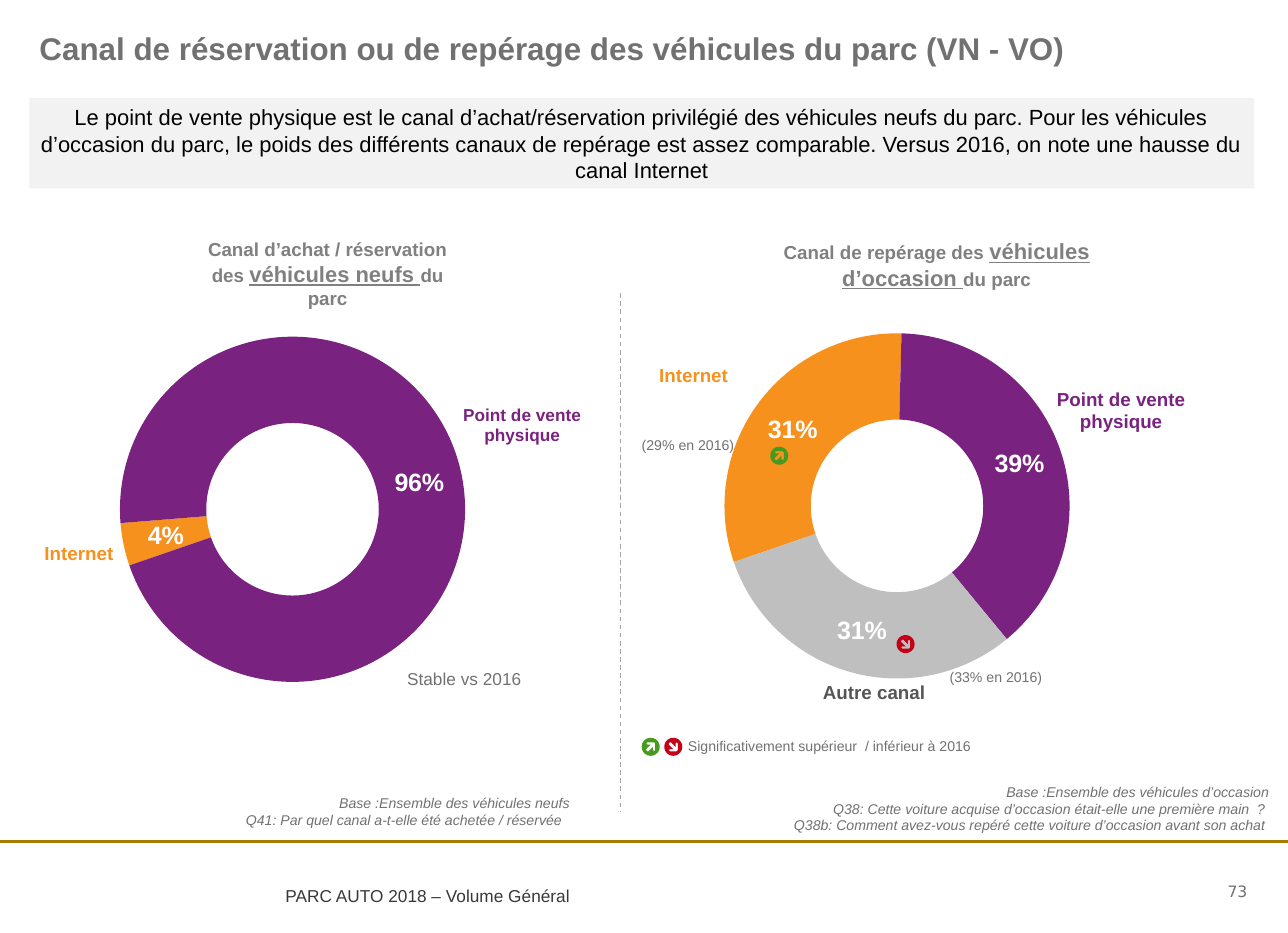
import math

from lxml import etree
from pptx import Presentation
from pptx.chart.data import CategoryChartData
from pptx.dml.color import RGBColor
from pptx.enum.chart import XL_CHART_TYPE
from pptx.enum.dml import MSO_LINE
from pptx.enum.shapes import MSO_CONNECTOR, MSO_SHAPE
from pptx.enum.text import MSO_ANCHOR, PP_ALIGN
from pptx.oxml import parse_xml
from pptx.oxml.ns import nsdecls, qn
from pptx.util import Inches, Pt

DOUGHNUT = XL_CHART_TYPE.DOUGHNUT
STRAIGHT = MSO_CONNECTOR.STRAIGHT
ROUNDED = MSO_SHAPE.ROUNDED_RECTANGLE
DASH = MSO_LINE.DASH
TOP, MIDDLE = MSO_ANCHOR.TOP, MSO_ANCHOR.MIDDLE
LEFT, CENTER, RIGHT = PP_ALIGN.LEFT, PP_ALIGN.CENTER, PP_ALIGN.RIGHT

COLORS = {
    "text": "717171", "heading": "808080", "footer": "383838", "black": "000000",
    "white": "FFFFFF", "band": "F2F2F2", "divider": "A6A6A6", "rule": "A67A00",
    "internet": "F7911E", "dealer": "7A2280", "other": "BFBFBF", "other_text": "555555",
    "up": "489A1E", "down": "C50017",
}
NO_INSET = (0, 0, 0, 0)
NOTE_INSET = (0.09, 0.04, 0.09, 0.04)
LABEL_INSET = (0.1, 0.05, 0.1, 0.05)
ICON = 0.16
# Up-right arrow inside the round icon, in hundredths of an inch
ARROW = [(11, 12), (10, 11), (10, 8), (6, 12), (5, 12), (4, 11), (4, 10), (8, 6),
         (5, 6), (4, 5), (5, 4), (11, 4), (12, 5), (12, 11)]


def rgb(name):
    return RGBColor.from_string(COLORS[name])


def style(font, size, color, bold=False, italic=False, name="Arial"):
    font.name, font.size = name, Pt(size)
    font.bold, font.italic = bold, italic
    font.color.rgb = rgb(color)


def set_frame(frame, insets, anchor):
    frame.word_wrap = True
    frame.vertical_anchor = anchor
    (frame.margin_left, frame.margin_top,
     frame.margin_right, frame.margin_bottom) = map(Inches, insets)


def write(frame, lines, size, color, align=LEFT, **font):
    for index, line in enumerate(lines):
        paragraph = frame.add_paragraph() if index else frame.paragraphs[0]
        paragraph.text = line
        paragraph.alignment = align
        style(paragraph.font, size, color, **font)


def add_text(slide, box, lines, size=9, color="text", align=LEFT,
             insets=NO_INSET, anchor=TOP, **font):
    frame = slide.shapes.add_textbox(*map(Inches, box)).text_frame
    set_frame(frame, insets, anchor)
    write(frame, lines, size, color, align, **font)


def add_channel(slide, left, top, channel, color, size=12):
    add_text(slide, (left, top, 1.38, 0.43), [channel], size, color, CENTER,
             LABEL_INSET, MIDDLE, bold=True)


def add_note(slide, left, top, height, lines):
    add_text(slide, (left, top, 5.09, height), lines, align=RIGHT,
             insets=NOTE_INSET, italic=True)


def add_heading(slide, box, before, vehicles, after):
    frame = slide.shapes.add_textbox(*map(Inches, box)).text_frame
    set_frame(frame, LABEL_INSET, TOP)
    paragraph = frame.paragraphs[0]
    paragraph.alignment = CENTER
    for words, size, underlined in ((before, 12, False), (vehicles, 14, True),
                                    (after, 12, False)):
        run = paragraph.add_run()
        run.text = words
        style(run.font, size, "heading", bold=True)
        run.font.underline = underlined


def add_line(slide, x1, y1, x2, y2, color, width):
    line = slide.shapes.add_connector(STRAIGHT, *map(Inches, (x1, y1, x2, y2)))
    line.line.color.rgb = rgb(color)
    line.line.width = Pt(width)
    etree.SubElement(line.element.spPr, qn("a:effectLst"))
    return line


def add_trend(slide, left, top, direction):
    """Round icon with an arrow cut out of it."""
    radius = ICON / 2
    angles = [math.radians(a) for a in range(0, 360, 10)]
    disc = [(radius + radius * math.cos(a), radius + radius * math.sin(a)) for a in angles]
    arrow = [(x / 100, y / 100) for x, y in ARROW]
    if direction == "down":
        arrow = [(x, ICON - y) for x, y in arrow]
    disc, arrow = ([(Inches(x), Inches(y)) for x, y in part] for part in (disc, arrow))
    builder = slide.shapes.build_freeform(*disc[0])
    builder.add_line_segments(disc[1:], close=True)
    builder.move_to(*arrow[0])
    builder.add_line_segments(arrow[1:], close=True)
    icon = builder.convert_to_shape(Inches(left), Inches(top))
    icon.fill.solid()
    icon.fill.fore_color.rgb = rgb(direction)
    icon.line.fill.background()
    icon.shadow.inherit = False


def add_doughnut(slide, left, top, shares):
    data = CategoryChartData(number_format="0%")
    data.categories = [channel for channel, _, _ in shares]
    data.add_series("Canal", [share for _, share, _ in shares])
    box = map(Inches, (left, top, 4.76, 3.82))
    chart = slide.shapes.add_chart(DOUGHNUT, *box, data).chart
    chart.has_legend = chart.has_title = False
    style(chart.font, 18, "text", name="DejaVu Sans")
    plot = chart.plots[0]
    plot.vary_by_categories = False
    for index, (_, _, color) in enumerate(shares):
        fmt = plot.series[0].points[index].format
        fmt.fill.solid()
        fmt.fill.fore_color.rgb = rgb(color)
        fmt.line.fill.background()
    labels = plot.series[0].data_labels
    labels.show_value = True
    labels.show_percentage = False
    labels.number_format, labels.number_format_is_linked = "0%", False
    style(labels.font, 16, "white", bold=True)

    # Ring rotation, hole and plot position
    area = chart.element.chart.plotArea
    ring = area.find(qn("c:doughnutChart"))
    for tag, value in (("c:firstSliceAng", 251), ("c:holeSize", 59)):
        ring.find(qn(tag)).set("val", str(value))
    for old in area.findall(qn("c:layout")):
        area.remove(old)
    settings = (("layoutTarget", "inner"), ("xMode", "edge"), ("yMode", "edge"),
                ("x", 0.15), ("y", 0.137), ("w", 0.643), ("h", 0.802))
    inner = "".join(f'<c:{tag} val="{value}"/>' for tag, value in settings)
    area.insert(0, parse_xml(f'<c:layout {nsdecls("c")}><c:manualLayout>{inner}'
                             '</c:manualLayout></c:layout>'))


def header(slide, left, top, width):
    title = slide.shapes.title
    title.left, title.top, title.width, title.height = map(
        Inches, (left + 0.09, top, width - 0.15, 0.6))
    set_frame(title.text_frame, (0, 0.26, 0, 0), TOP)
    write(title.text_frame, ["Canal de réservation ou de repérage des véhicules du parc (VN - VO)"],
          20, "text", bold=True)
    band = slide.shapes.add_shape(ROUNDED, *map(Inches, (left, top + 0.87, width, 0.8)))
    band.adjustments[0] = 0
    band.fill.solid()
    band.fill.fore_color.rgb = rgb("band")
    band.line.fill.background()
    band.shadow.inherit = False
    set_frame(band.text_frame, NOTE_INSET, MIDDLE)
    write(band.text_frame, [
        "Le point de vente physique est le canal d’achat/réservation privilégié des véhicules "
        "neufs du parc. Pour les véhicules d’occasion du parc, le poids des différents canaux de "
        "repérage est assez comparable. Versus 2016, on note une hausse du canal Internet"],
        14, "black", CENTER)


def new_vehicles(slide, left, top):
    add_heading(slide, (left + 1.63, top, 2.55, 0.74),
                "Canal d’achat / réservation des ", "véhicules neufs ", "du parc")
    add_doughnut(slide, left + 0.35, top + 0.4, [
        ("Internet", 0.04, "internet"), ("Point de vente physique", 0.96, "dealer")])
    add_channel(slide, left + 0.01, top + 2.63, "Internet", "internet")
    add_channel(slide, left + 3.94, top + 1.49, "Point de vente physique", "dealer", 11)
    add_text(slide, (left + 3.61, top + 3.86, 1.53, 0.18), ["Stable vs 2016"], 11)
    add_note(slide, left + 0.05, top + 4.94, 0.39, [
        "Base :Ensemble des véhicules neufs",
        "Q41: Par quel canal a-t-elle été achetée / réservée  "])


def used_vehicles(slide, left, top):
    add_heading(slide, (left + 1.34, top, 2.93, 0.57),
                "Canal de repérage des ", "véhicules d’occasion ", "du parc")
    add_doughnut(slide, left + 0.21, top + 0.37, [
        ("Internet", 0.31, "internet"), ("Point de vente physique", 0.39, "dealer"),
        ("Autre canal", 0.31, "other")])
    add_channel(slide, left - 0.04, top + 1.05, "Internet", "internet")
    add_channel(slide, left + 3.75, top + 1.36, "Point de vente physique", "dealer")
    add_channel(slide, left + 1.56, top + 3.86, "Autre canal", "other_text")
    # Change since 2016
    add_text(slide, (left + 0.19, top + 1.81, 0.94, 0.22), ["(29% en 2016)"])
    add_text(slide, (left + 2.92, top + 3.86, 0.94, 0.22), ["(33% en 2016)"])
    add_trend(slide, left + 1.33, top + 1.9, "up")
    add_trend(slide, left + 2.45, top + 3.57, "down")
    # Key to the icons
    add_trend(slide, left + 0.19, top + 4.48, "up")
    add_trend(slide, left + 0.39, top + 4.48, "down")
    add_text(slide, (left + 0.6, top + 4.48, 2.56, 0.37),
             ["Significativement supérieur  / inférieur à 2016"])
    add_note(slide, left + 0.75, top + 4.84, 0.54, [
        "Base :Ensemble des véhicules d’occasion",
        "Q38: Cette voiture acquise d’occasion était-elle une première main  ? ",
        "Q38b: Comment avez-vous repéré cette voiture d’occasion avant son achat "])


def footer(slide, top, width):
    add_line(slide, 0, top, width, top, "rule", 1.5)
    add_text(slide, (2.53, top + 0.39, 3.22, 0.24), ["PARC AUTO 2018 – Volume Général"],
             11, "footer")
    add_text(slide, (width - 1.16, top + 0.34, 0.8, 0.2), ["73"], 10, align=RIGHT,
             anchor=MIDDLE, name="DejaVu Sans")


def main():
    deck = Presentation()
    deck.slide_width, deck.slide_height = Inches(11.42), Inches(8.27)
    slide = deck.slides.add_slide(deck.slide_layouts[5])
    header(slide, 0.26, 0, 10.86)
    new_vehicles(slide, 0, 2.06)
    add_line(slide, 5.5, 2.6, 5.5, 7.2, "divider", 0.75).line.dash_style = DASH
    used_vehicles(slide, 5.5, 2.06)
    footer(slide, 7.46, 11.42)
    deck.save("out.pptx")


if __name__ == "__main__":
    main()
